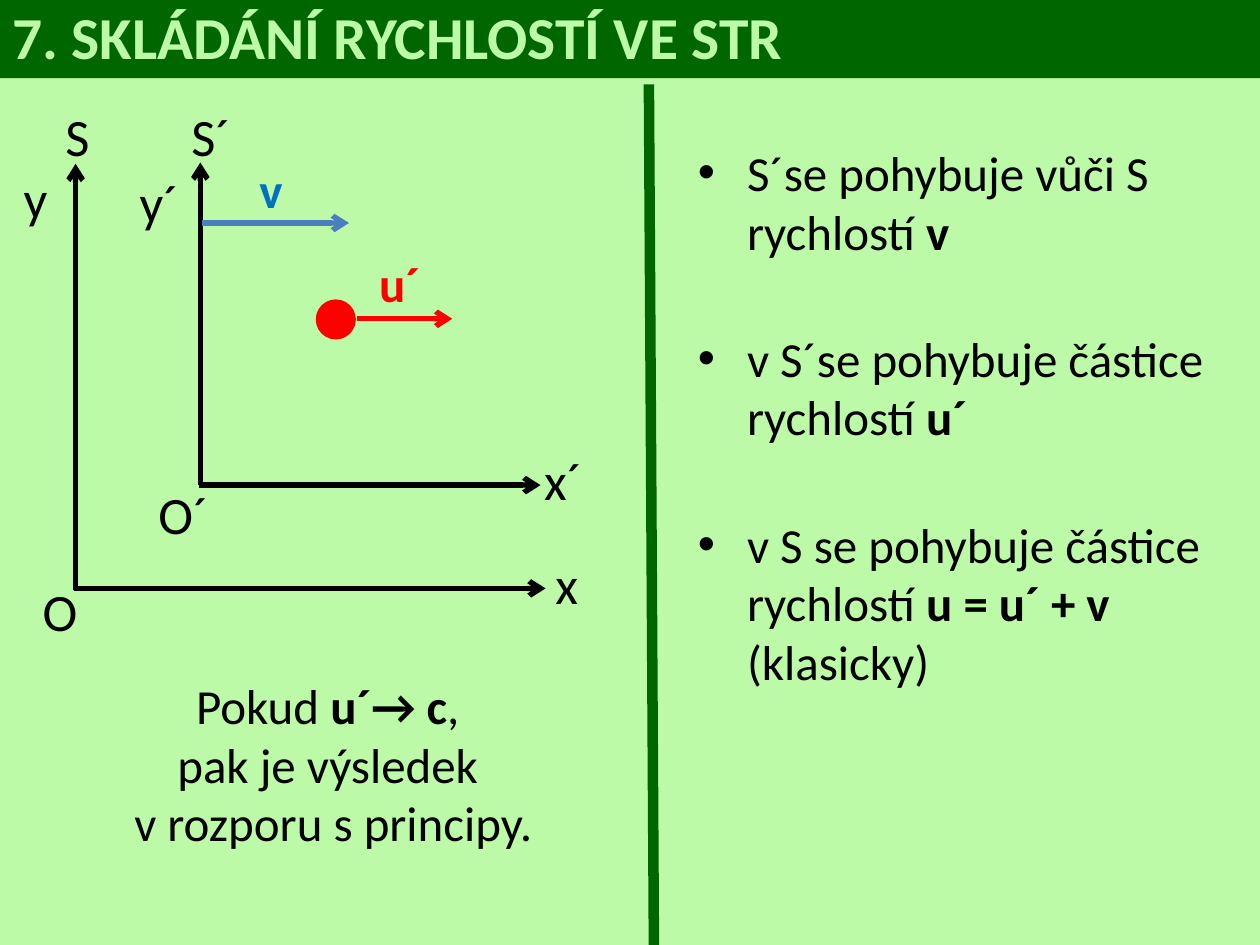
"""Build the slide on adding velocities in special relativity."""
import pptx
import pptx.util
import pptx.dml.color
import pptx.enum.shapes
import pptx.enum.text
import pptx.oxml.ns
import lxml.etree

Inches = pptx.util.Inches
Pt = pptx.util.Pt
qn = pptx.oxml.ns.qn
ALIGN = pptx.enum.text.PP_ALIGN
ANCHOR = pptx.enum.text.MSO_ANCHOR
KIND = pptx.enum.shapes.MSO_SHAPE

PALE, GREEN, BLACK, RED = "BDFAA8", "006600", "000000", "FF0000"
TITLE = [("7. SKLÁDÁNÍ RYCHLOSTÍ VE STR", True)]
ARROWS = [
    ((0.59, 4.67), (4.33, 4.67), BLACK),
    ((0.6, 4.68), (0.6, 1.3), BLACK),
    ((1.58, 3.85), (4.29, 3.85), BLACK),
    ((1.59, 3.85), (1.59, 1.29), BLACK),
    ((1.6, 1.77), (2.77, 1.77), "4B7EBC"),
    ((2.83, 2.53), (3.59, 2.53), RED),
]
DIVIDE = (5.15, 0.67), (5.19, 7.5), GREEN, 6
AXES = [
    ("S", 0.42, 0.78), ("y", 0.09, 1.27), ("O", 0.24, 4.55), ("x", 4.31, 4.33),
    ("S´", 1.42, 0.78), ("y´", 1.01, 1.3), ("O´", 1.16, 3.78), ("x´", 4.22, 3.51),
]
SPEEDS = [("v", 1.96, 1.22, "0070C0"), ("u´", 2.91, 1.96, RED)]
POINTS = [
    [("S´se pohybuje vůči S\nrychlostí ", False), ("v", True)],
    [("v\u00a0S´se pohybuje částice rychlostí ", False), ("u´", True)],
    [("v\u00a0S se pohybuje částice rychlostí ", False), ("u = u´ + v ", True),
     ("(klasicky)", False)],
]
CLOSE = [("Pokud ", False), ("u´→ c", True),
         (", \npak je výsledek \nv\u00a0rozporu s principy.", False)]


def paint(fill, tone):
    fill.solid()
    fill.fore_color.rgb = pptx.dml.color.RGBColor.from_string(tone)


def apply(item, style):
    for name, value in style.items():
        setattr(item, name, value)


def write(para, runs, size, tone):
    for text, bold in runs:
        for i, line in enumerate(text.split("\n")):
            if i:
                para.add_line_break()
            run = para.add_run()
            run.text = line
            apply(run.font, {"name": "Calibri", "size": Pt(size), "bold": bold})
            paint(run.font.fill, tone)


def add_box(slide, *place):
    frame = slide.shapes.add_textbox(*map(Inches, place)).text_frame
    frame.word_wrap = True
    return frame


def add_line(slide, start, end, tone, width=3, head=True):
    link = slide.shapes.add_connector(
        pptx.enum.shapes.MSO_CONNECTOR.STRAIGHT, *map(Inches, start + end))
    link.line.width = Pt(width)
    paint(link.line.fill, tone)
    if head:
        tail = lxml.etree.SubElement(link.line._get_or_add_ln(), qn("a:tailEnd"))
        tail.set("type", "arrow")
    lxml.etree.SubElement(link._element.spPr, qn("a:effectLst"))


def add_shape(slide, kind, place, tone):
    shape = slide.shapes.add_shape(kind, *map(Inches, place))
    shape.shadow.inherit = False
    paint(shape.fill, tone)
    paint(shape.line.fill, tone)
    return shape


def add_title(slide):
    bar = add_shape(slide, KIND.RECTANGLE, (0, -0.05, 10, 0.67), GREEN)
    bar.line.fill.background()
    apply(bar.text_frame, {"vertical_anchor": ANCHOR.MIDDLE, "word_wrap": True})
    para = bar.text_frame.paragraphs[0]
    para.alignment = ALIGN.LEFT
    write(para, TITLE, 34, PALE)


def add_points(slide):
    frame = add_box(slide, 5.44, 1.08, 4.38, 4.96)
    for i, runs in enumerate(POINTS):
        para = frame.add_paragraph() if i else frame.paragraphs[0]
        props = para._p.get_or_add_pPr()
        props.set("marL", str(Inches(0.39)))
        props.set("indent", str(-Inches(0.39)))
        font = lxml.etree.SubElement(props, qn("a:buFont"))
        font.set("typeface", "Arial")
        lxml.etree.SubElement(props, qn("a:buChar")).set("char", "•")
        if i:
            para.space_before = Pt(39)
        write(para, runs, 28, BLACK)


def main():
    deck = pptx.Presentation()
    apply(deck, {"slide_width": Inches(10), "slide_height": Inches(7.5)})
    slide = deck.slides.add_slide(deck.slide_layouts[6])
    paint(slide.background.fill, PALE)
    add_title(slide)
    for arrow in ARROWS:
        add_line(slide, *arrow)
    add_line(slide, *DIVIDE, head=False)
    for text, left, top in AXES:
        box = add_box(slide, left, top, 0.63, 0.61)
        write(box.paragraphs[0], [(text, False)], 30, BLACK)
    for text, left, top, tone in SPEEDS:
        box = add_box(slide, left, top, 0.81, 0.57)
        write(box.paragraphs[0], [(text, True)], 28, tone)
    add_shape(slide, KIND.OVAL, (2.52, 2.39, 0.29, 0.29), RED).line.width = Pt(2)
    add_points(slide)
    para = add_box(slide, 0.53, 5.31, 4.23, 1.75).paragraphs[0]
    para.alignment = ALIGN.CENTER
    write(para, CLOSE, 28, BLACK)
    deck.save("out.pptx")


if __name__ == "__main__":
    main()
